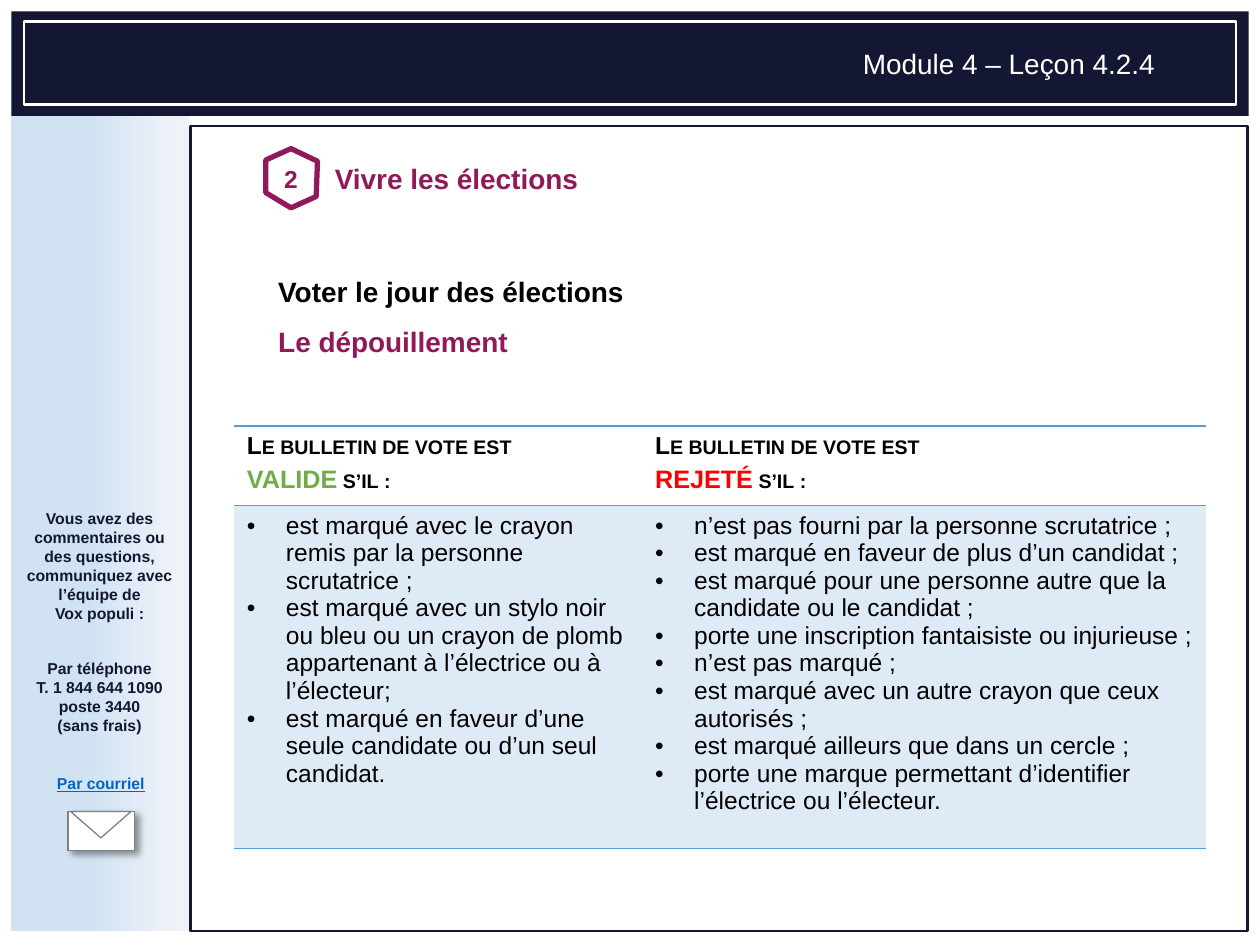
from copy import deepcopy

from lxml import etree
from pptx import Presentation
from pptx.dml.color import RGBColor
from pptx.enum import shapes as kinds, text as txt
from pptx.oxml import ns
from pptx.util import Inches, Pt

COLORS = {
    "navy": "141733", "plum": "91195A", "white": "FFFFFF", "black": "000000",
    "gray": "808080", "link": "0563C1", "green": "70AD47", "red": "FF0000",
    "rule": "5B9BD5", "body": "DEEBF7",
    "side_light": "F1F2F9", "side_mid": "D1E3F3", "side_blue": "CEE1F2",
}
LEFT, CENTER = txt.PP_ALIGN.LEFT, txt.PP_ALIGN.CENTER
TOP, MIDDLE = txt.MSO_ANCHOR.TOP, txt.MSO_ANCHOR.MIDDLE


def rgb(name):
    return RGBColor.from_string(COLORS[name])


def add_text(paragraph, content, size=14, color="black", bold=False,
             underline=False, small_caps=False, align=LEFT):
    """Append formatted text to a paragraph; newlines become line breaks."""
    paragraph.alignment = align
    for number, line in enumerate(content.split("\n")):
        if number:
            paragraph.add_line_break()
        if not line:
            continue
        run = paragraph.add_run()
        run.text = line
        run.font.name, run.font.size = "Arial", Pt(size)
        run.font.bold, run.font.underline = bold, underline
        run.font.color.rgb = rgb(color)
        if small_caps:
            run.font._element.set("cap", "small")


prs = Presentation()
prs.slide_width, prs.slide_height = Inches(10), Inches(7.5)
slide = prs.slides.add_slide(prs.slide_layouts[6])

# Frame, header band and envelope: preset, box, fill, line, line width
RECT, TRIANGLE = kinds.MSO_SHAPE.RECTANGLE, kinds.MSO_SHAPE.ISOSCELES_TRIANGLE
panels = []
for preset, box, fill, line, weight in [
    (RECT, (0.09, 0.88, 1.41, 6.51), None, None, 0),
    (RECT, (1.51, 1, 8.39, 6.39), None, "navy", 1.5),
    (RECT, (0.09, 0.09, 9.82, 0.83), "navy", None, 0),
    (RECT, (0.19, 0.17, 9.62, 0.66), None, "white", 1.5),
    (RECT, (0.54, 6.44, 0.53, 0.31), "white", "gray", 0.75),
    (TRIANGLE, (0.56, 6.44, 0.48, 0.21), "white", "gray", 0.75),
]:
    panel = slide.shapes.add_shape(preset, *map(Inches, box))
    panel.shadow.inherit = False
    if fill:
        panel.fill.solid()
        panel.fill.fore_color.rgb = rgb(fill)
    else:
        panel.fill.background()
    if line:
        panel.line.color.rgb = rgb(line)
        panel.line.width = Pt(weight)
    else:
        panel.line.fill.background()
    panels.append(panel)

sidebar, envelope, flap = panels[0], panels[4], panels[5]
flap.rotation = 180

sidebar.fill.gradient()
sidebar.fill.gradient_angle = 180
stop_list = sidebar._element.spPr.find(".//" + ns.qn("a:gsLst"))
stop_list.append(deepcopy(stop_list[-1]))
for stop, (position, color) in zip(
        sidebar.fill.gradient_stops,
        [(0.06, "side_light"), (0.56, "side_mid"), (0.99, "side_blue")]):
    stop.position = position
    stop.color.rgb = rgb(color)

effects = envelope._element.spPr.find(ns.qn("a:effectLst"))
shadow = etree.SubElement(effects, ns.qn("a:outerShdw"), blurRad=str(Pt(4)),
                          dist=str(Pt(3)), dir="2700000", algn="tl")
shade = etree.SubElement(shadow, ns.qn("a:srgbClr"), val=COLORS["black"])
etree.SubElement(shade, ns.qn("a:alpha"), val="40000")

# Hexagon badge
corners = [(2.31, 1.18), (2.52, 1.28), (2.51, 1.56), (2.31, 1.65),
           (2.11, 1.53), (2.11, 1.27)]
corners = [(Inches(x), Inches(y)) for x, y in corners]
outline = slide.shapes.build_freeform(*corners[0])
outline.add_line_segments(corners[1:], close=True)
badge = outline.convert_to_shape()
badge.shadow.inherit = False
badge.fill.solid()
badge.fill.fore_color.rgb = rgb("white")
badge.line.color.rgb = rgb("plum")
badge.line.width = Pt(3)

# Text boxes: box, anchor, wrap, paragraphs, format
frames = []
for box, anchor, wrap, paragraphs, style in [
    ((0.09, 3.99, 1.4, 1.92), TOP, True,
     ["Vous avez des commentaires ou des questions, communiquez avec "
      "l’équipe de\nVox populi :",
      "Par téléphone\nT. 1 844 644 1090\nposte 3440\n(sans frais)"],
     dict(size=9, color="navy", bold=True, align=CENTER)),
    ((2.14, 1.25, 0.34, 0.34), MIDDLE, False, ["2"],
     dict(size=14, color="plum", bold=True, align=CENTER)),
    ((2.56, 1.25, 3, 0.33), MIDDLE, True, ["Vivre les élections"],
     dict(size=16, color="plum", bold=True)),
    ((6.75, 0.32, 2.55, 0.37), TOP, True, ["Module 4 – Leçon 4.2.4"],
     dict(size=16, color="white")),
    ((0.35, 6.09, 0.9, 0.25), TOP, False, ["Par courriel"],
     dict(size=9, color="link", bold=True, underline=True, align=CENTER)),
    ((2.11, 2, 7.19, 0.89), MIDDLE, True, ["Voter le jour des élections\n"],
     dict(size=16, bold=True)),
]:
    frame = slide.shapes.add_textbox(*map(Inches, box)).text_frame
    frame.word_wrap, frame.vertical_anchor = wrap, anchor
    for number, content in enumerate(paragraphs):
        paragraph = frame.add_paragraph() if number else frame.paragraphs[0]
        if number:
            paragraph.space_before = Pt(20.7)
        add_text(paragraph, content, **style)
    frames.append(frame)

heading = frames[-1].paragraphs[0]
heading.line_spacing = 1.5
add_text(heading, "Le dépouillement", size=16, color="plum", bold=True)

# Valid and rejected ballots
columns = [
    (3.24, "valide", "green", [
        "est marqué avec le crayon remis par la personne scrutatrice ;",
        "est marqué avec un stylo noir ou bleu ou un crayon de plomb "
        "appartenant à l’électrice ou à l’électeur;",
        "est marqué en faveur d’une seule candidate ou d’un seul candidat."]),
    (4.47, "rejeté", "red", [
        "n’est pas fourni par la personne scrutatrice ;",
        "est marqué en faveur de plus d’un candidat ;",
        "est marqué pour une personne autre que la candidate ou le candidat ;",
        "porte une inscription fantaisiste ou injurieuse ;",
        "n’est pas marqué ;",
        "est marqué avec un autre crayon que ceux autorisés ;",
        "est marqué ailleurs que dans un cercle ;",
        "porte une marque permettant d’identifier l’électrice ou l’électeur."]),
]
ballots = slide.shapes.add_table(2, 2, Inches(1.86), Inches(3.38),
                                 Inches(7.71), Inches(3.32)).table
ballots.first_row = ballots.horz_banding = False
ballots.rows[0].height, ballots.rows[1].height = Inches(0.6), Inches(2.72)

for col, (width, verdict, color, reasons) in enumerate(columns):
    ballots.columns[col].width = Inches(width)
    header, body = ballots.cell(0, col), ballots.cell(1, col)
    title = header.text_frame.paragraphs[0]
    for content, size, tint in [("Le bulletin de vote est\n", 14, "black"),
                                (verdict, 18, color), (" s’il :", 14, "black")]:
        add_text(title, content, size=size, color=tint, bold=True, small_caps=True)

    for number, reason in enumerate(reasons):
        frame = body.text_frame
        item = frame.add_paragraph() if number else frame.paragraphs[0]
        props = item._p.get_or_add_pPr()
        props.set("marL", str(Inches(0.31)))
        props.set("indent", str(Inches(-0.31)))
        etree.SubElement(props, ns.qn("a:buFont"), typeface="Arial")
        etree.SubElement(props, ns.qn("a:buChar"), char="•")
        add_text(item, reason)

    header.fill.background()
    body.fill.solid()
    body.fill.fore_color.rgb = rgb("body")
    for cell in (header, body):
        props = cell._tc.get_or_add_tcPr()
        for place, side in enumerate(["lnL", "lnR", "lnT", "lnB"]):
            border = etree.Element(ns.qn("a:" + side), w=str(Pt(1)))
            props.insert(place, border)
            if side in ("lnT", "lnB"):
                paint = etree.SubElement(border, ns.qn("a:solidFill"))
                etree.SubElement(paint, ns.qn("a:srgbClr"), val=COLORS["rule"])
            else:
                etree.SubElement(border, ns.qn("a:noFill"))

prs.save("out.pptx")
